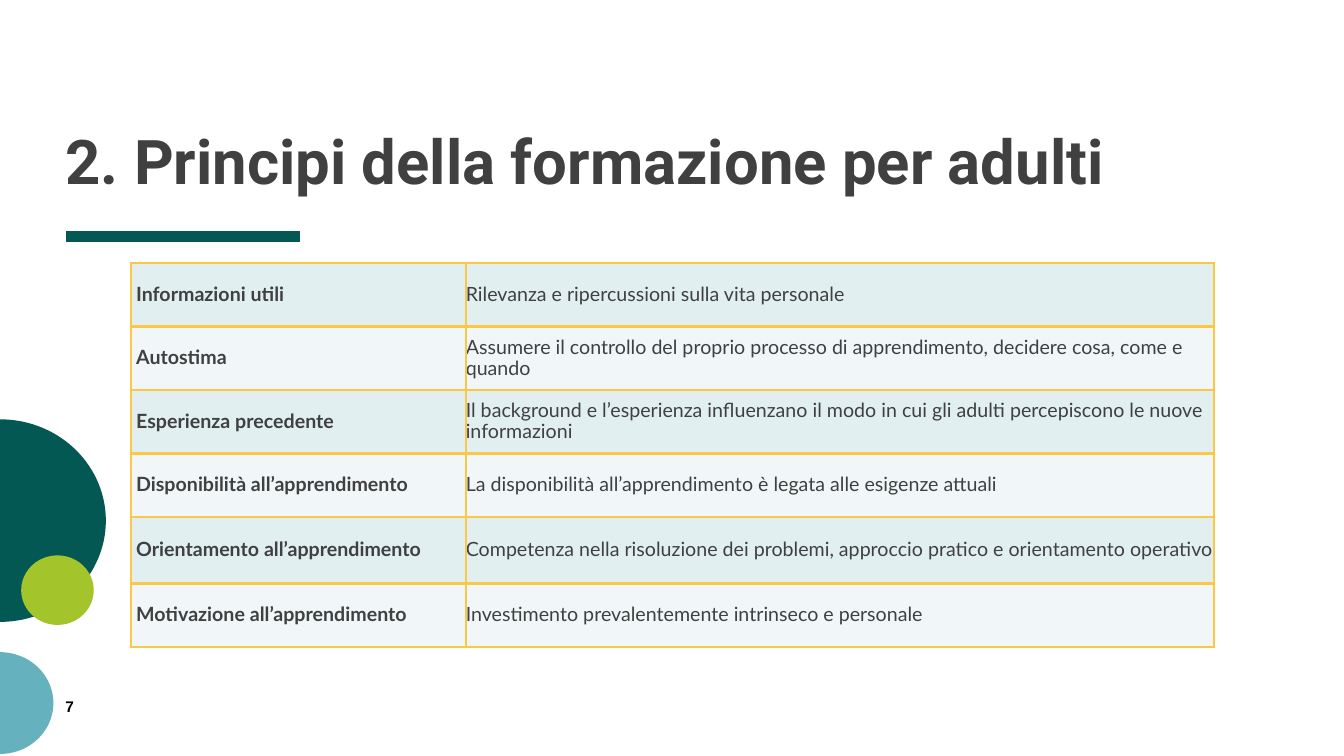
import math

from lxml import etree
from pptx import Presentation
from pptx import util as u
from pptx.dml.color import RGBColor
from pptx.enum import shapes, text
from pptx.oxml import ns

COLORS = {"teal": "035854", "blue": "65B2BE", "lime": "A3C42A", "text": "404040",
          "black": "000000", "border": "FBC846", "band": "E1EFF1", "light": "F1F7F8"}
PRINCIPLES = [
    ("Informazioni utili", "Rilevanza e ripercussioni sulla vita personale"),
    ("Autostima", "Assumere il controllo del proprio processo di apprendimento, "
                  "decidere cosa, come e quando"),
    ("Esperienza precedente", "Il background e l’esperienza influenzano il modo in cui "
                              "gli adulti percepiscono le nuove informazioni"),
    ("Disponibilità all’apprendimento",
     "La disponibilità all’apprendimento è legata alle esigenze attuali"),
    ("Orientamento all’apprendimento", "Competenza nella risoluzione dei problemi, "
                                       "approccio pratico e orientamento operativo"),
    ("Motivazione all’apprendimento", "Investimento prevalentemente intrinseco e personale"),
]
COL_WIDTHS = [3.32, 7.42]
ROW_HEIGHTS = [0.63, 0.63, 0.63, 0.63, 0.66, 0.63]


def rgb(name):
    return RGBColor.from_string(COLORS[name])


def paint(sp, color):
    sp.shadow.inherit = False
    sp.fill.solid()
    sp.fill.fore_color.rgb = rgb(color)
    sp.line.fill.background()


def write(p, content, color, spacing=1.0, **font):
    p.line_spacing = spacing
    r = p.add_run()
    r.text = content
    r.font.color.rgb = rgb(color)
    for key, value in font.items():
        setattr(r.font, key, value)


def add_text(s, box, content, color, anchor, wrap, spacing=1.0, **font):
    tf = s.shapes.add_textbox(*map(u.Inches, box)).text_frame
    settings = {"word_wrap": wrap, "vertical_anchor": anchor, "margin_left": 0,
                "margin_right": 0, "margin_top": 0, "margin_bottom": 0}
    for key, value in settings.items():
        setattr(tf, key, value)
    write(tf.paragraphs[0], content, color, spacing, **font)


def add_half_disc(s, box, color):
    """Right half of an ellipse that fills the box."""
    x, y, w, h = box
    angles = [math.radians(a) for a in range(-90, 91, 3)]
    points = [(u.Inches(x + w * math.cos(a)), u.Inches(y + h / 2 * (1 + math.sin(a))))
              for a in angles]
    outline = s.shapes.build_freeform(*points[0], scale=1.0)
    outline.add_line_segments(points[1:], close=True)
    paint(outline.convert_to_shape(), color)


def add_decoration(s, box):
    x, y, w, h = box
    add_half_disc(s, (x, y, w, 2.01), "teal")
    add_half_disc(s, (x, y + h - 1.01, 0.53, 1.01), "blue")
    dot = s.shapes.add_shape(shapes.MSO_SHAPE.OVAL, u.Inches(x + 0.21), u.Inches(y + 1.35),
                             u.Inches(0.72), u.Inches(0.69))
    paint(dot, "lime")


def add_heading(s, box):
    x, y, w, h = box
    # Accent rule under the title
    rule_y = y + h + 0.4
    rule = s.shapes.add_connector(shapes.MSO_CONNECTOR.STRAIGHT, u.Inches(x), u.Inches(rule_y),
                                  u.Inches(x + 2.33), u.Inches(rule_y))
    rule.line.color.rgb = rgb("teal")
    rule.line.width = u.Pt(8)
    etree.SubElement(rule._element.spPr, ns.qn("a:effectLst"))
    # Title
    add_text(s, box, "2. Principi della formazione per adulti", "text",
             text.MSO_ANCHOR.BOTTOM, True, 0.8, name="Roboto", size=u.Pt(44), bold=True)


def add_borders(cell):
    tc_pr = cell._tc.get_or_add_tcPr()
    for side in ("lnL", "lnR", "lnT", "lnB"):
        ln = etree.SubElement(tc_pr, ns.qn(f"a:{side}"), w=str(u.Pt(2)))
        fill = etree.SubElement(ln, ns.qn("a:solidFill"))
        etree.SubElement(fill, ns.qn("a:srgbClr"), val=COLORS["border"])


def add_principles(s, box):
    table = s.shapes.add_table(len(PRINCIPLES), 2, *map(u.Inches, box)).table
    table.first_row = table.horz_banding = False
    for col, width in zip(table.columns, COL_WIDTHS):
        col.width = u.Inches(width)
    for row, height in zip(table.rows, ROW_HEIGHTS):
        row.height = u.Inches(height)
    for i, entry in enumerate(PRINCIPLES):
        for j, content in enumerate(entry):
            cell = table.cell(i, j)
            is_label = j == 0
            settings = {"margin_left": u.Inches(0.05 if is_label else 0), "margin_right": 0,
                        "margin_top": 0, "margin_bottom": 0,
                        "vertical_anchor": text.MSO_ANCHOR.MIDDLE}
            for key, value in settings.items():
                setattr(cell, key, value)
            add_borders(cell)
            cell.fill.solid()
            cell.fill.fore_color.rgb = rgb("light" if i % 2 else "band")
            write(cell.text_frame.paragraphs[0], content, "text", 0.9,
                  name="Lato", size=u.Pt(14), bold=is_label)


def main():
    prs = Presentation()
    prs.slide_width, prs.slide_height = u.Inches(13.33), u.Inches(7.5)
    s = prs.slides.add_slide(prs.slide_layouts[6])
    add_decoration(s, (0, 4.16, 1.05, 3.32))
    add_heading(s, (0.65, 0.11, 11.89, 1.84))
    add_principles(s, (1.3, 2.61, sum(COL_WIDTHS), sum(ROW_HEIGHTS)))
    # Page number
    add_text(s, (0.65, 6.92, 0.14, 0.18), "7", "black", text.MSO_ANCHOR.TOP, False,
             name="Arial", size=u.Pt(11), bold=True)
    prs.save("out.pptx")


if __name__ == "__main__":
    main()
